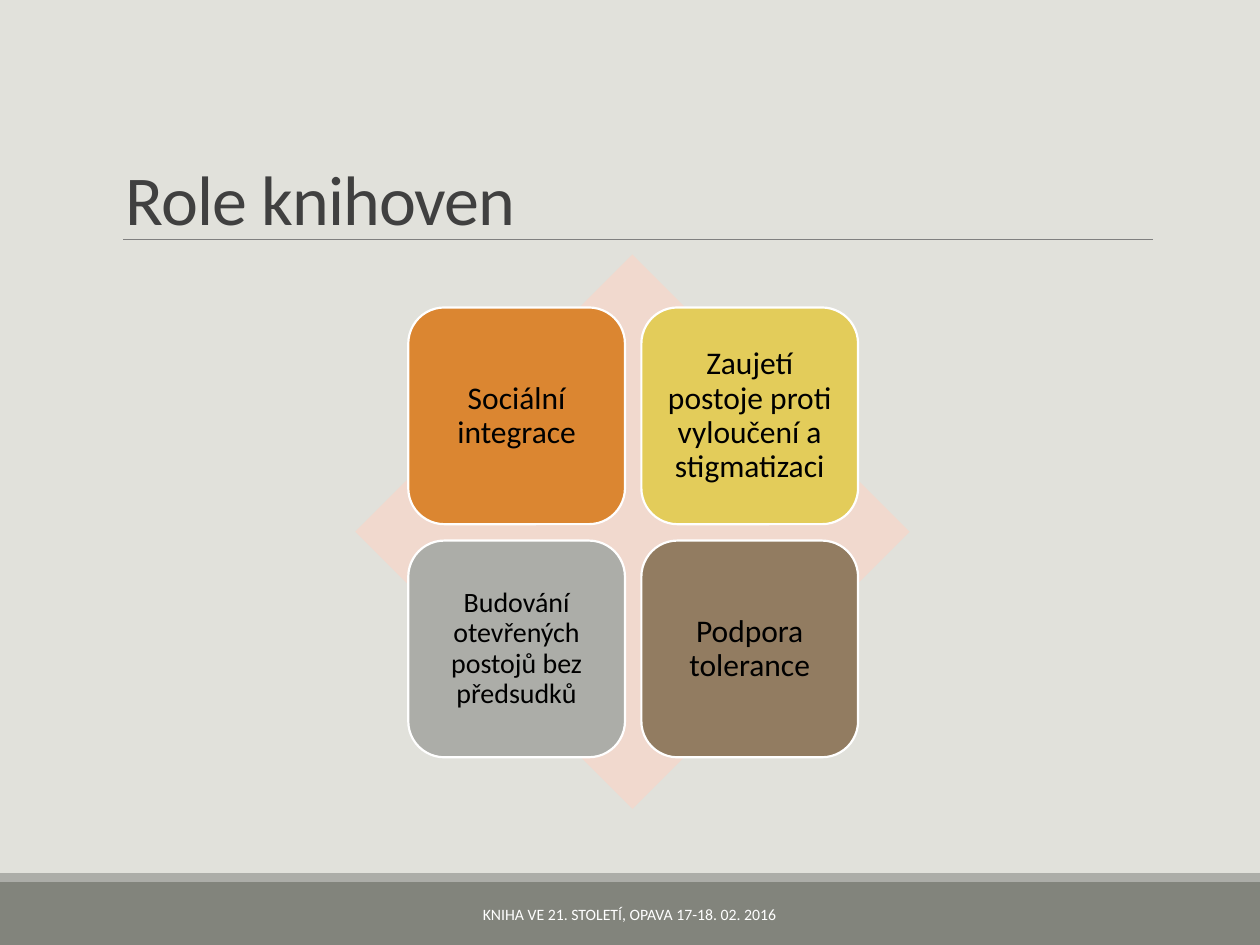
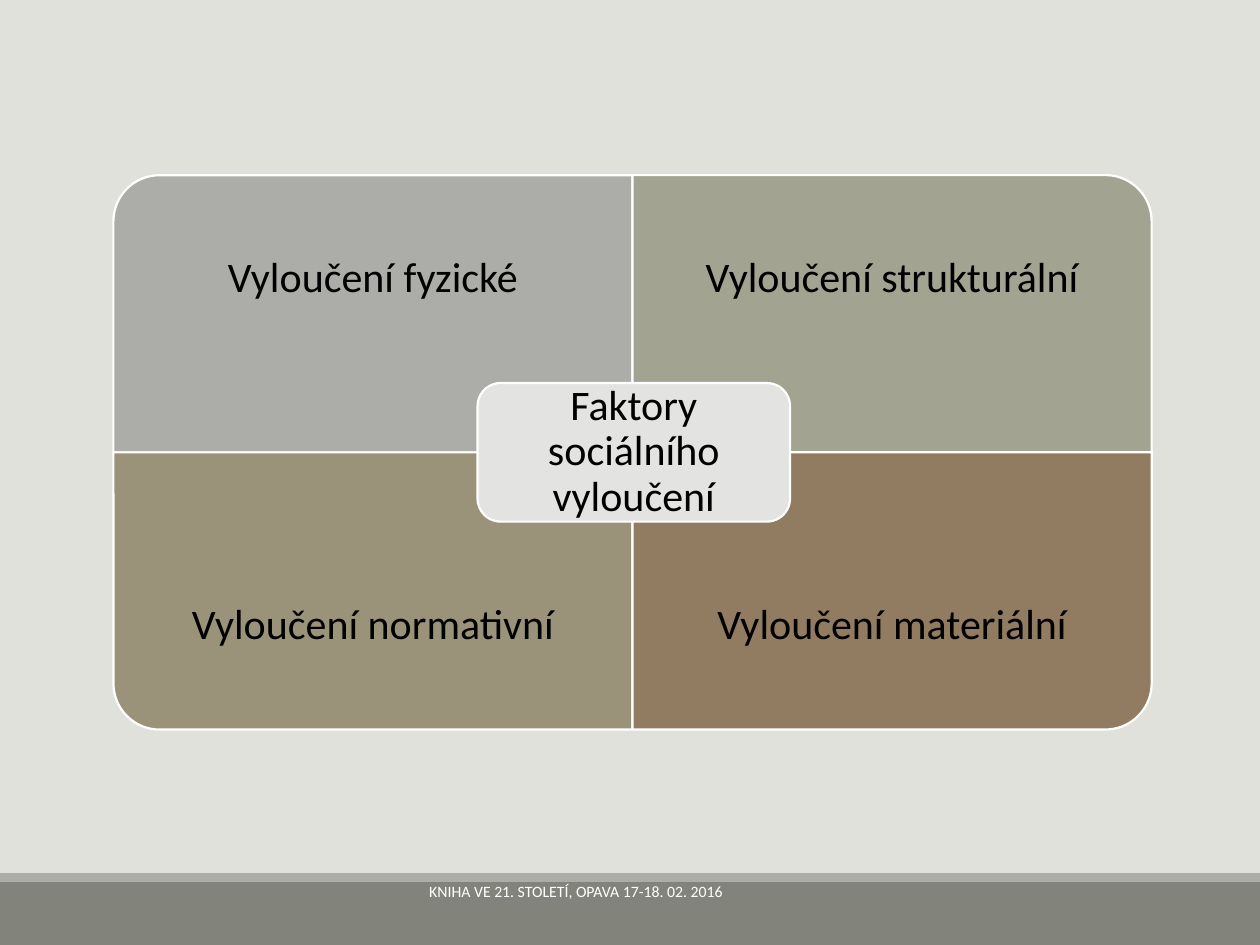
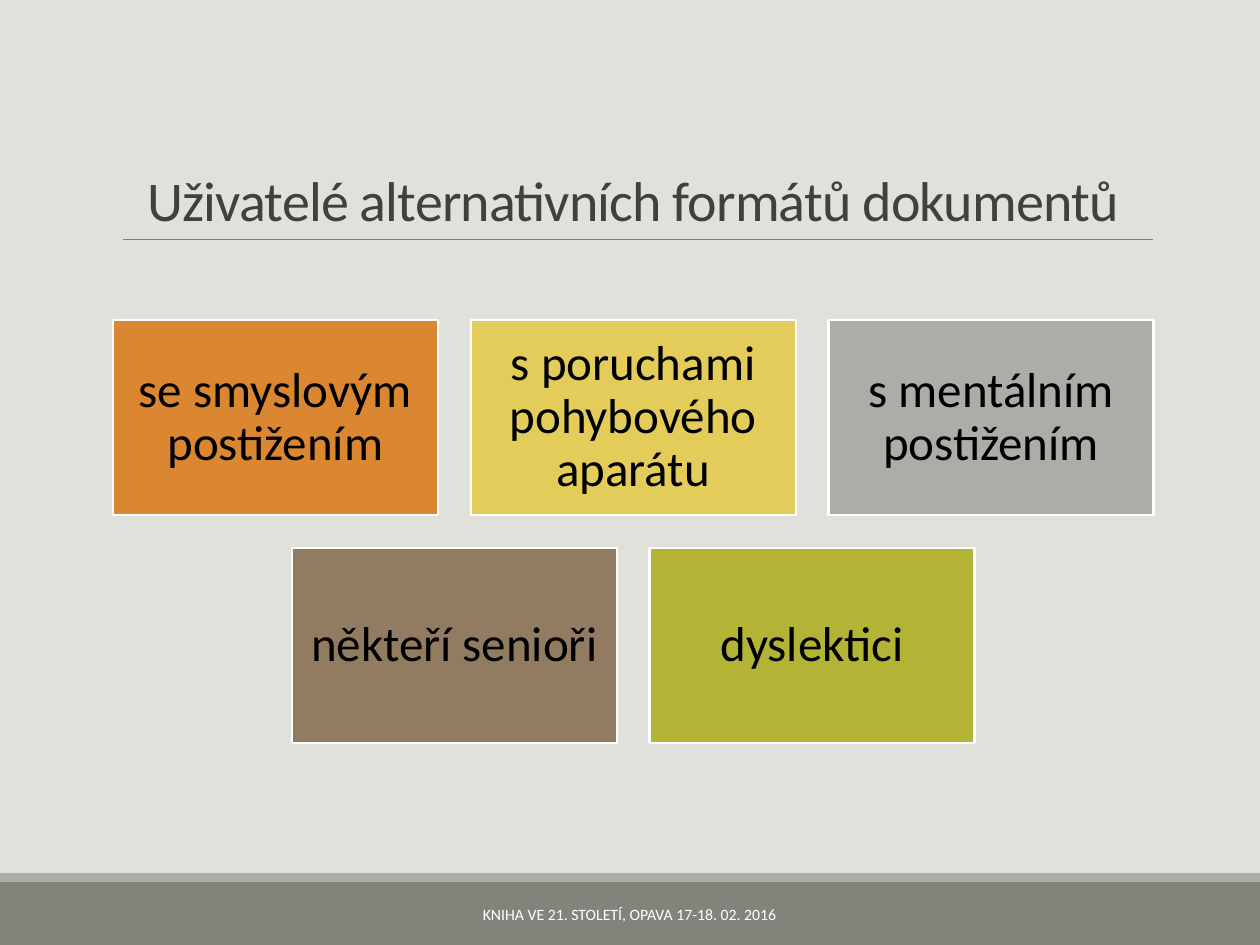
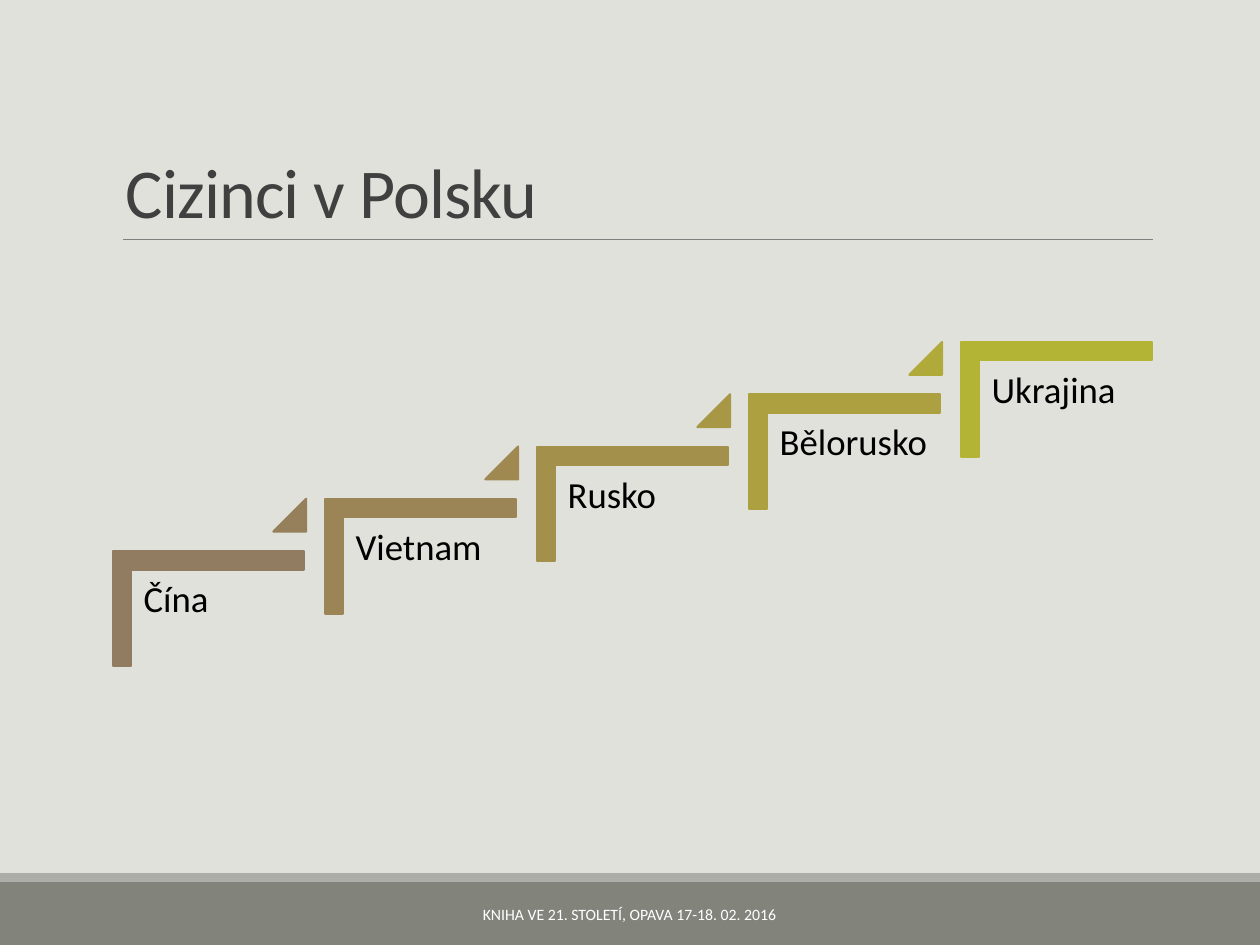
from pptx import Presentation
from pptx.dml.color import RGBColor
from pptx.enum.shapes import MSO_CONNECTOR, MSO_SHAPE
from pptx.enum.text import MSO_ANCHOR as ANCHOR, PP_ALIGN as ALIGN
from pptx.oxml.ns import qn
from pptx.util import Inches, Pt
from lxml.etree import SubElement

FONT = "Calibri"
BACKGROUND, WHITE, BLACK = "E1E1DB", "FFFFFF", "000000"
BAND, GRAY, TITLE, RULE = "82847C", "ACADA8", "404040", "808080"
ORANGE, YELLOW, BROWN, GREEN = "DB8631", "E3CC5A", "927C61", "B3B435"
FOOTER = "KNIHA VE 21. STOLETÍ, OPAVA 17-18. 02. 2016"
LEFT, WIDTH = 0.9, 8.25


def rgb(color):
    """Turn a hex string into a colour."""
    return RGBColor.from_string(color)


def write(shape, text, size, color=BLACK, inset=None, align=ALIGN.CENTER,
          anchor=ANCHOR.MIDDLE, spacing=0.9):
    """Put one styled paragraph into a shape and return it."""
    frame = shape.text_frame
    frame.word_wrap = True
    frame.vertical_anchor = anchor
    if inset is not None:
        frame.margin_left = frame.margin_right = Inches(inset)
        frame.margin_top = frame.margin_bottom = Inches(inset)
    paragraph = frame.paragraphs[0]
    paragraph.text = text
    paragraph.alignment = align
    paragraph.line_spacing = spacing
    paragraph.font.name = FONT
    paragraph.font.size = Pt(size)
    paragraph.font.color.rgb = rgb(color)
    return paragraph


def add_text(slide, box, text, size, **style):
    """Add a text box and return its paragraph."""
    return write(slide.shapes.add_textbox(*map(Inches, box)), text, size, **style)


def add_shape(slide, kind, box, fill, line=None, rotation=0, adjustments=()):
    """Add a flat preset shape."""
    shape = slide.shapes.add_shape(kind, *map(Inches, box))
    shape.shadow.inherit = False
    shape.rotation = rotation
    shape.fill.solid()
    shape.fill.fore_color.rgb = rgb(fill)
    if line:
        shape.line.color.rgb = rgb(line)
        shape.line.width = Pt(1.25)
    else:
        shape.line.fill.background()
    for index, value in enumerate(adjustments):
        shape.adjustments[index] = value
    return shape


def add_card(slide, kind, box, fill, text, size, inset):
    """Add a white-edged shape with centred text."""
    write(add_shape(slide, kind, box, fill, WHITE), text, size, inset=inset)


def add_slide(presentation):
    """Add a blank slide with the two bottom bands."""
    slide = presentation.slides.add_slide(presentation.slide_layouts[6])
    add_shape(slide, MSO_SHAPE.RECTANGLE, (0, 7, 10, 0.5), BAND)
    add_shape(slide, MSO_SHAPE.RECTANGLE, (0, 6.93, 10, 0.07), GRAY)
    return slide


def add_title(slide, text, size=40, top=0.31, align=ALIGN.LEFT):
    """Add the title and the rule under it."""
    rule = slide.shapes.add_connector(
        MSO_CONNECTOR.STRAIGHT, *map(Inches, (0.98, 1.9, 9.15, 1.9)))
    rule.line.color.rgb = rgb(RULE)
    rule.line.width = Pt(0.5)
    SubElement(rule._element.spPr, qn("a:effectLst"))
    paragraph = add_text(slide, (LEFT, top, WIDTH, 1.59), text, size, color=TITLE,
                         align=align, anchor=ANCHOR.BOTTOM, spacing=0.85)
    paragraph.runs[0]._r.get_or_add_rPr().set("spc", "-50")


def add_footer(slide, box=(3.02, 7.06, 3.95, 0.4)):
    """Add the conference line."""
    add_text(slide, box, FOOTER, 9, color=WHITE, spacing=1)


def build_roles(presentation):
    """Build the four library roles on a diamond."""
    slide = add_slide(presentation)
    add_title(slide, "Role knihoven", top=0.36)
    add_shape(slide, MSO_SHAPE.DIAMOND, (2.82, 2.02, 4.4, 4.4), "F1D9CE")
    roles = [("Sociální integrace", ORANGE, 18),
             ("Zaujetí postoje proti vyloučení a stigmatizaci", YELLOW, 18),
             ("Budování otevřených postojů bez předsudků", GRAY, 16),
             ("Podpora tolerance", BROWN, 18)]
    side, step = 1.72, 1.85
    for index, (text, color, size) in enumerate(roles):
        row, column = divmod(index, 2)
        box = (3.24 + column * step, 2.44 + row * step, side, side)
        add_card(slide, MSO_SHAPE.ROUNDED_RECTANGLE, box, color, text, size, 0.07)
    add_footer(slide)


def build_factors(presentation):
    """Build the four quadrants of exclusion around their common name."""
    slide = add_slide(presentation)
    factors = [("Vyloučení fyzické", GRAY, 270), ("Vyloučení strukturální", "A3A391", 0),
               ("Vyloučení normativní", "9B9379", 180), ("Vyloučení materiální", BROWN, 90)]
    top, width, height, text_height = 1.39, 4.12, 2.2, 1.65
    for index, (text, color, rotation) in enumerate(factors):
        row, column = divmod(index, 2)
        x, y = LEFT + column * width, top + row * height
        box = (x, y, width, height)
        if rotation % 180:
            shift = (width - height) / 2
            box = (x + shift, y - shift, height, width)
        add_shape(slide, MSO_SHAPE.ROUND_1_RECTANGLE, box, color, WHITE, rotation)
        text_top = y + row * (height - text_height)
        add_text(slide, (x, text_top, width, text_height), text, 24, inset=0.19)
    add_card(slide, MSO_SHAPE.ROUNDED_RECTANGLE, (3.79, 3.04, 2.48, 1.1), "E3E3E1",
             "Faktory sociálního vyloučení", 24, 0.1)
    add_footer(slide, (1.38, 6.9, 6.38, 0.34))


def build_users(presentation):
    """Build the user groups in centred rows."""
    slide = add_slide(presentation)
    add_title(slide, "Uživatelé alternativních formátů dokumentů", 32, align=ALIGN.CENTER)
    rows = [[("se smyslovým postižením", ORANGE), ("s poruchami pohybového aparátu", YELLOW),
             ("s mentálním postižením", GRAY)],
            [("někteří senioři", BROWN), ("dyslektici", GREEN)]]
    width, height, gap = 2.58, 1.55, 0.26
    for row, groups in enumerate(rows):
        row_width = len(groups) * (width + gap) - gap
        left = LEFT + (WIDTH - row_width) / 2
        for column, (text, color) in enumerate(groups):
            box = (left + column * (width + gap), 2.54 + row * (height + gap), width, height)
            add_card(slide, MSO_SHAPE.RECTANGLE, box, color, text, 28, 0.12)
    add_footer(slide)


def build_foreigners(presentation):
    """Build the rising steps of countries."""
    slide = add_slide(presentation)
    add_title(slide, "Cizinci v Polsku")
    countries = ["Čína", "Vietnam", "Rusko", "Bělorusko", "Ukrajina"]
    step_colors = [BROWN, "9B8456", "A3904B", "ACA040", GREEN]
    triangle_colors = ["967F5B", "9F8950", "A89845", "B0AA3A"]
    last = len(countries) - 1
    run, rise = 6.73 / last, 1.66 / last
    for index, (country, color) in enumerate(zip(countries, step_colors)):
        x, y = 1.2 + index * run, 4.07 - index * rise
        add_shape(slide, MSO_SHAPE.CORNER, (x, y, 0.91, 1.52), color, color, 90, (0.16, 0.16))
        add_text(slide, (x - 0.15, y + 0.45, 1.37, 1.2), country, 21, inset=0.09,
                 align=ALIGN.LEFT, anchor=ANCHOR.TOP)
        if index < last:
            shade = triangle_colors[index]
            add_shape(slide, MSO_SHAPE.ISOSCELES_TRIANGLE, (x + 0.97, y - 0.11, 0.26, 0.26),
                      shade, shade, adjustments=(1,))
    add_footer(slide)


def main():
    """Build and save the presentation."""
    presentation = Presentation()
    presentation.slide_width, presentation.slide_height = Inches(10), Inches(7.5)
    background = presentation.slide_master.background.fill
    background.solid()
    background.fore_color.rgb = rgb(BACKGROUND)
    build_roles(presentation)
    build_factors(presentation)
    build_users(presentation)
    build_foreigners(presentation)
    presentation.save("out.pptx")


if __name__ == "__main__":
    main()
